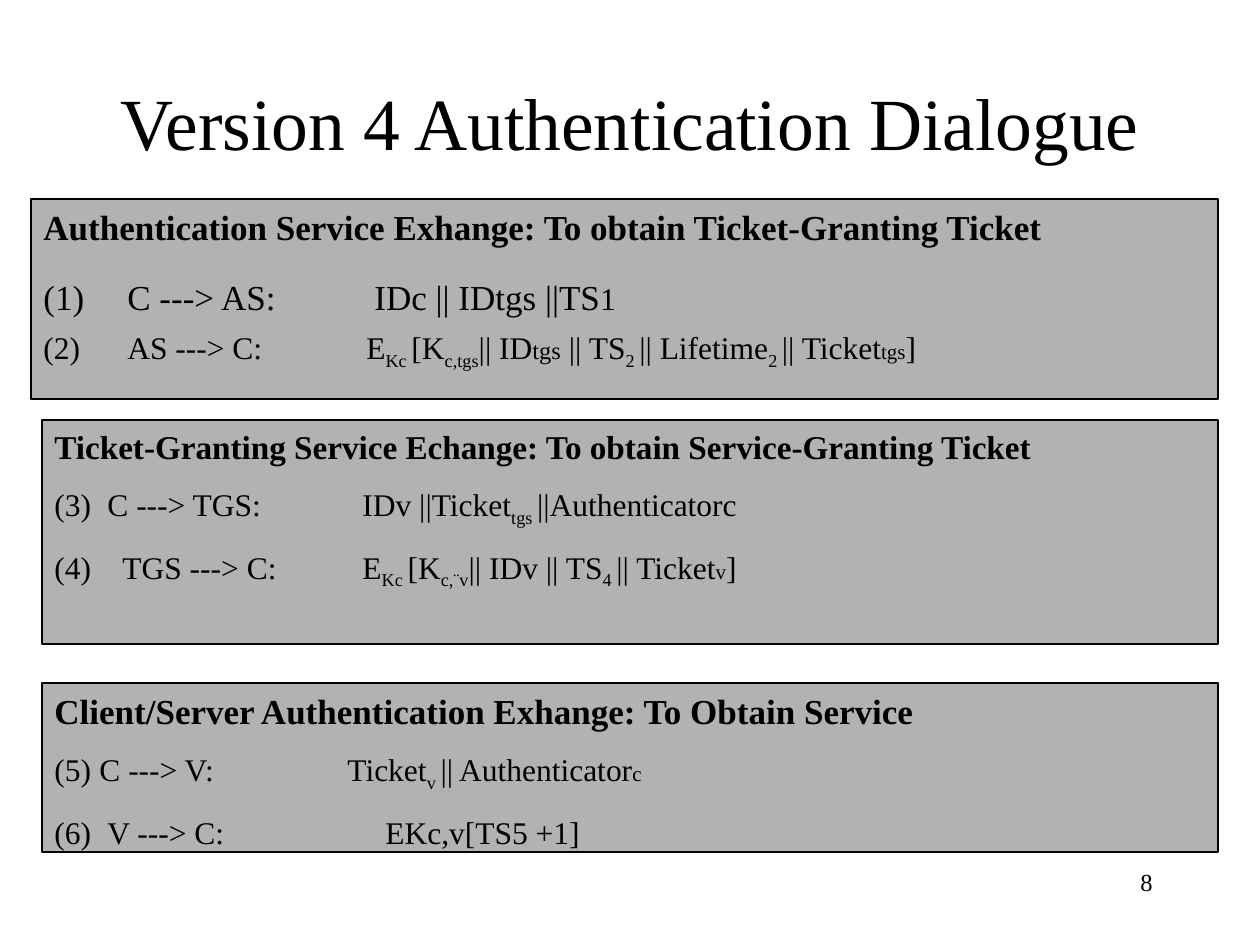
from lxml import etree
from pptx import Presentation
from pptx.dml.color import RGBColor
from pptx.enum.shapes import MSO_SHAPE
from pptx.enum.text import MSO_ANCHOR, PP_ALIGN
from pptx.oxml.ns import qn
from pptx.util import Pt

RECT = MSO_SHAPE.RECTANGLE
TOP, MIDDLE = MSO_ANCHOR.TOP, MSO_ANCHOR.MIDDLE
LEFT, CENTER, RIGHT = PP_ALIGN.LEFT, PP_ALIGN.CENTER, PP_ALIGN.RIGHT
BLACK = RGBColor(0, 0, 0)
GRAY = RGBColor(0xB2, 0xB2, 0xB2)
FONT = "Times New Roman"
SUB = "sub"

TITLE = ("Version 4 Authentication Dialogue", (0, 42, 1260, 158), 42)
NUMBER = ("8", (903, 861, 262, 63), 14)

# Each step: number, route, tab stops, text size, space before, message runs
PANELS = [
    ((31, 199, 1187, 200), 20,
     "Authentication Service Exhange: To obtain Ticket-Granting Ticket", [
         ("(1)", "C ---> AS:", (84, 331), 20, 16,
          [("IDc || IDtgs ||TS", 20), ("1", 18)]),
         ("(2)", "AS ---> C:", (84, 323), 18, 6,
          [("E", 18), ("Kc ", SUB), ("[K", 18), ("c,tgs", SUB),
           ("|| ID", 18), ("tgs", 14), (" || TS", 18), ("2 ", SUB),
           ("|| Lifetime", 18), ("2 ", SUB), ("|| Ticket", 18),
           ("tgs", 12), ("]", 18)]),
     ]),
    ((42, 420, 1176, 224), 19,
     "Ticket-Granting Service Echange: To obtain Service-Granting Ticket", [
         ("(3)", "C ---> TGS:", (53, 308), 18, 11,
          [("IDv ||Ticket", 18), ("tgs ", SUB), ("||Authenticatorc", 18)]),
         ("(4)", "TGS ---> C:", (68, 308), 18, 11,
          [("E", 18), ("Kc ", SUB), ("[K", 18), ("c,¨v", SUB),
           ("|| IDv || TS", 18), ("4 ", SUB), ("|| Ticket", 18),
           ("v", 12), ("]", 18)]),
     ]),
    ((42, 683, 1176, 169), 20,
     "Client/Server Authentication Exhange: To Obtain Service", [
         ("(5)", "C ---> V:", (45, 293), 18, 11,
          [("Ticket", 18), ("v ", SUB), ("|| Authenticator", 18), ("c", 12)]),
         ("(6)", "V ---> C:", (53, 331), 18, 11,
          [("EKc,v[TS5 +1]", 18)]),
     ]),
]


def px(n):
    return round(n * 914400 / 126)


def place(shape, box):
    shape.left, shape.top, shape.width, shape.height = map(px, box)


def style(para, size, align=LEFT, bold=False):
    para.alignment = align
    font = para.font
    font.name, font.size, font.bold = FONT, Pt(size), bold
    font.color.rgb = BLACK


def set_tabs(para, stops):
    props = para._p.get_or_add_pPr()
    tabs = etree.Element(qn("a:tabLst"))
    for stop in stops:
        etree.SubElement(tabs, qn("a:tab"), pos=str(px(stop)), algn="l")
    props.find(qn("a:defRPr")).addprevious(tabs)


def add_step(frame, step):
    num, route, stops, size, gap, parts = step
    para = frame.add_paragraph()
    style(para, size)
    para.space_before = Pt(gap)
    set_tabs(para, stops)
    for text, kind in [(f"{num}\t{route}\t", size)] + parts:
        run = para.add_run()
        run.text = text
        if kind == SUB:
            run._r.get_or_add_rPr().set("baseline", "-25000")
        elif kind != size:
            run.font.size = Pt(kind)


def add_panel(slide, box, size, head, steps):
    panel = slide.shapes.add_shape(RECT, *map(px, box))
    panel.shadow.inherit = False
    panel.fill.solid()
    panel.fill.fore_color.rgb = GRAY
    panel.line.color.rgb = BLACK
    panel.line.width = Pt(0.75)
    frame = panel.text_frame
    frame.word_wrap = True
    frame.vertical_anchor = TOP
    frame.text = head
    style(frame.paragraphs[0], size, bold=True)
    for step in steps:
        add_step(frame, step)


def main():
    deck = Presentation()
    deck.slide_width, deck.slide_height = px(1260), px(945)
    slide = deck.slides.add_slide(deck.slide_layouts[5])

    text, box, size = TITLE
    title = slide.shapes.title
    place(title, box)
    title.text_frame.text = text
    title.text_frame.vertical_anchor = MIDDLE
    style(title.text_frame.paragraphs[0], size, CENTER)

    for panel in PANELS:
        add_panel(slide, *panel)

    text, box, size = NUMBER
    frame = slide.shapes.add_textbox(*map(px, box)).text_frame
    frame.word_wrap = True
    frame.text = text
    style(frame.paragraphs[0], size, RIGHT)

    deck.save("out.pptx")


if __name__ == "__main__":
    main()
